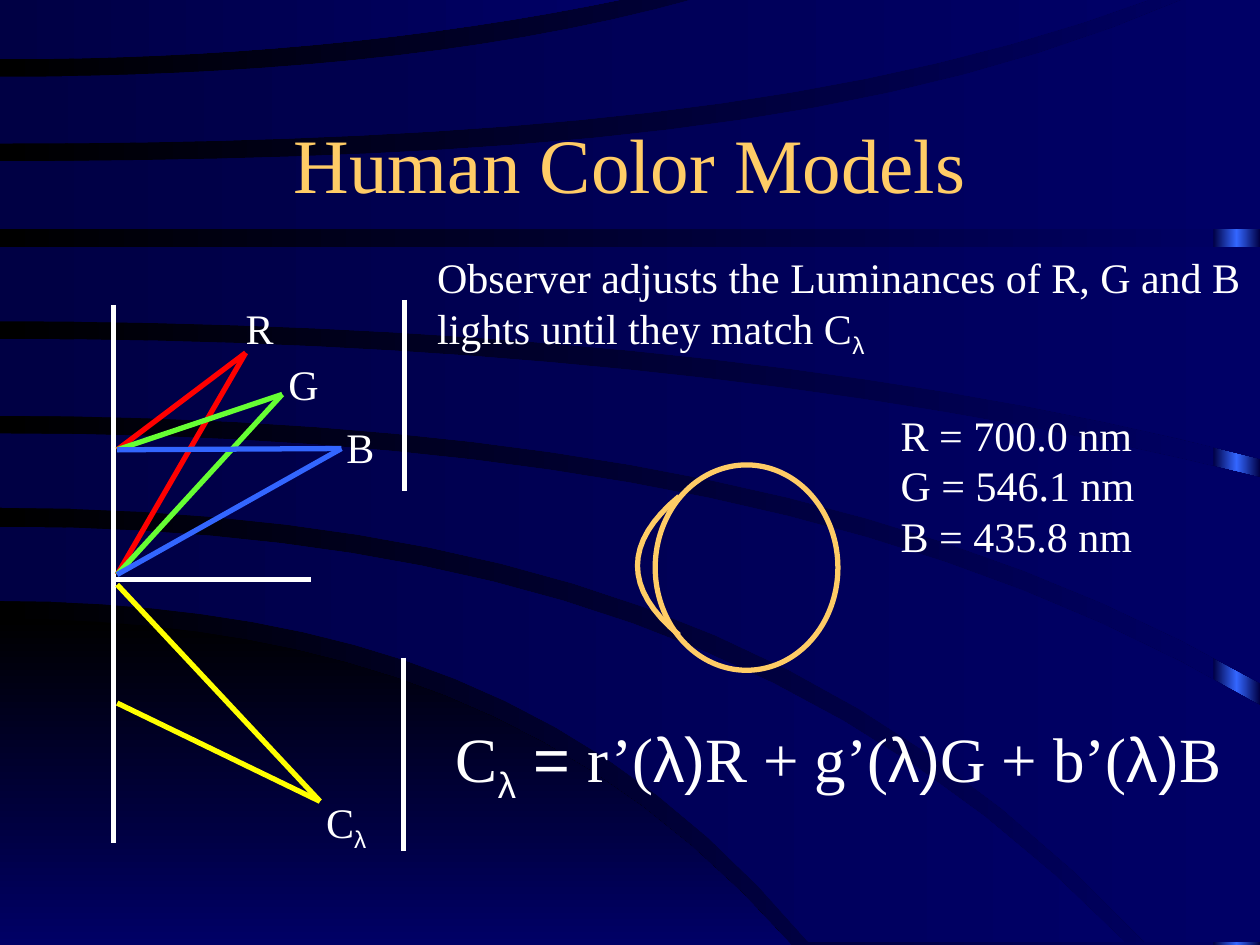
from copy import deepcopy
from dataclasses import dataclass
from typing import NamedTuple

from lxml.etree import SubElement
from pptx import Presentation
from pptx.dml.color import RGBColor
from pptx.enum.shapes import MSO_CONNECTOR, MSO_SHAPE
from pptx.enum.text import MSO_ANCHOR, MSO_AUTO_SIZE, PP_ALIGN
from pptx.oxml.ns import qn
from pptx.util import Inches, Pt

# The slide is a grid of 100 columns by 75 rows of square cells.
COLUMNS, ROWS = 100, 75
CELL = Inches(0.1)
SERIF, SANS = "Times New Roman", "Arial"
WHITE, GOLD, RED, GREEN, BLUE, YELLOW = (
    "FFFFFF", "FFCC66", "FF0000", "66FF33", "3366FF", "FFFF00")
BLACK, NAVY, DEEP_BLUE = "000000", "000044", "000066"
LINE_WIDTH = Pt(3)
STEPS = 16
BEND = 0.7

Point = tuple[float, float]


class Edge(NamedTuple):
    """A curve, level at the left side, by its rows at the start, bend and end."""
    start: float
    bend: float
    end: float
    reach: float = COLUMNS

    def points(self) -> list[Point]:
        rise, bow = self.end - self.start, self.bend - self.start
        square = (bow - rise * BEND**4) / (BEND**2 - BEND**4)
        shares = [step / STEPS for step in range(STEPS + 1)]
        return [(self.reach * t, self.start + square * t**2 + (rise - square) * t**4)
                for t in shares]


def level(row: float, reach: float = COLUMNS) -> Edge:
    return Edge(row, row, row, reach)


@dataclass
class Wave:
    upper: Edge
    lower: Edge
    start_color: str = NAVY
    angle: int = 0

    def outline(self) -> list[Point]:
        """Both edges, squared off at the right side if one of them reaches it."""
        corners = []
        if max(self.upper.reach, self.lower.reach) == COLUMNS:
            corners = [(COLUMNS, self.upper.end), (COLUMNS, self.lower.end)]
        return self.upper.points() + corners + self.lower.points()[::-1]


class Stroke(NamedTuple):
    start: Point
    end: Point
    color: str = WHITE


class Light(NamedTuple):
    apex: Point
    color: str
    wall_rows: Point


class Span(NamedTuple):
    text: str
    font: str = SERIF
    subscript: bool = False


class Label(NamedTuple):
    left: float
    top: float
    width: float
    lines: list[list[Span]]
    size: int = 24


BOTTOM, TOP = 74.8, -0.2
WAVES = [
    Wave(Edge(49.1, 59.4, ROWS, 62.8), level(ROWS, 62.5), BLACK, 270),
    Wave(Edge(41.8, 54.8, BOTTOM, 89.3), Edge(47.7, 58.2, BOTTOM, 64.2)),
    Wave(Edge(34.4, 43, 56), Edge(40.3, 53.7, BOTTOM, 90.9)),
    Wave(Edge(26.9, 31.9, 37.9), Edge(33, 41.5, 54.2)),
    Wave(level(19.6), Edge(25.5, 30.3, 36.4)),
    Wave(Edge(12.8, 8.3, TOP, 94.3), level(18.2)),
    Wave(Edge(6.1, 3.4, TOP, 55.6), Edge(11.4, 7.1, TOP, 91.7)),
    Wave(level(TOP, 50.1), Edge(4.7, 2.4, TOP, 50.1)),
]
SCREENS = [
    Stroke((9, 24.2), (9, 66.9)),
    Stroke((9, 46), (24.7, 46)),
    Stroke((32.1, 23.8), (32.1, 39)),
    Stroke((32, 52.2), (32, 67.5)),
]
WALL_COLUMN = 9.3
UPPER_WALL, LOWER_WALL = (35.7, 45.6), (46.4, 55.8)
LIGHTS = [
    Light((19.5, 28), RED, UPPER_WALL),
    Light((22.4, 31.3), GREEN, UPPER_WALL),
    Light((27.1, 35.6), BLUE, UPPER_WALL),
    Light((25.4, 63.6), YELLOW, LOWER_WALL),
]
RAYS = [Stroke(light.apex, (WALL_COLUMN, row), light.color)
        for light in LIGHTS for row in light.wall_rows]
LAMBDA = Span("λ", SANS, True)
ARGUMENT = Span("λ)", SANS)
LABELS = [
    Label(18.5, 23.5, 4.2, [[Span("R")]]),
    Label(21.9, 28, 4.4, [[Span("G")]]),
    Label(26.5, 33, 4.2, [[Span("B")]]),
    Label(24.9, 62.7, 5.5, [[Span("C"), LAMBDA]]),
    Label(33.7, 19.5, 65.8, [
        [Span("Observer adjusts the Luminances of R, G and B")],
        [Span("lights until they match C"), LAMBDA]]),
    Label(35.2, 56.6, 64, [
        [Span("C"), LAMBDA, Span(" = ", SANS), Span("r’("), ARGUMENT, Span("R + g’("),
         ARGUMENT, Span("G + b’("), ARGUMENT, Span("B")]], 36),
    Label(70.5, 32, 20.6, [
        [Span(text)] for text in ("R = 700.0 nm", "G = 546.1 nm", "B = 435.8 nm")]),
]


def rgb(color: str) -> RGBColor:
    return RGBColor.from_string(color)


def cells(*values: float) -> list[int]:
    return [round(value * CELL) for value in values]


def fill_gradient(fill, start: str, end: str, angle: int = 0) -> None:
    fill.gradient()
    fill.gradient_angle = angle
    for stop, color, position in zip(fill.gradient_stops, (start, end), (0, 1)):
        stop.color.rgb = rgb(color)
        stop.position = position


def draw_outline(shapes, points: list[Point], close: bool):
    first, *rest = [cells(*point) for point in points]
    builder = shapes.build_freeform(*first)
    builder.add_line_segments(rest, close=close)
    shape = builder.convert_to_shape()
    shape.shadow.inherit = False
    return shape


def draw_wave(shapes, wave: Wave) -> None:
    shape = draw_outline(shapes, wave.outline(), True)
    fill_gradient(shape.fill, wave.start_color, DEEP_BLUE, wave.angle)
    shape.line.fill.background()


def draw_glow_strip(shapes) -> None:
    """Strip down the right side, bright along its middle."""
    width = 3.7
    strip = shapes.add_shape(MSO_SHAPE.RECTANGLE, *cells(COLUMNS - width, 0, width, ROWS))
    strip.shadow.inherit = False
    strip.line.fill.background()
    fill_gradient(strip.fill, NAVY, NAVY)
    stops = strip.element.find(".//" + qn("a:gsLst"))
    stops.insert(1, deepcopy(stops[0]))
    middle = strip.fill.gradient_stops[1]
    middle.position = 0.5
    middle.color.rgb = rgb(BLUE)


def draw_eye(shapes) -> None:
    parts = shapes.add_group_shape().shapes
    eyeball = parts.add_shape(MSO_SHAPE.OVAL, *cells(52, 36.9, 14.5, 16.3))
    eyeball.shadow.inherit = False
    heights = [2 * step / STEPS - 1 for step in range(STEPS + 1)]
    cornea = [(53.9 - 3.3 * (1 - height**2), 44.9 + 5.5 * height) for height in heights]
    for shape in (eyeball, draw_outline(parts, cornea, False)):
        shape.fill.background()
        shape.line.color.rgb = rgb(GOLD)
        shape.line.width = LINE_WIDTH


def draw_stroke(shapes, stroke: Stroke) -> None:
    connector = shapes.add_connector(
        MSO_CONNECTOR.STRAIGHT, *cells(*stroke.start, *stroke.end))
    connector.line.color.rgb = rgb(stroke.color)
    connector.line.width = LINE_WIDTH
    SubElement(connector.element.spPr, qn("a:effectLst"))


def draw_label(shapes, label: Label) -> None:
    height = len(label.lines) * label.size / 6 + 1
    box = shapes.add_textbox(*cells(label.left, label.top, label.width, height))
    frame = box.text_frame
    frame.word_wrap = False
    frame.auto_size = MSO_AUTO_SIZE.SHAPE_TO_FIT_TEXT
    for index, spans in enumerate(label.lines):
        paragraph = frame.add_paragraph() if index else frame.paragraphs[0]
        for span in spans:
            run = paragraph.add_run()
            run.text = span.text
            run.font.name, run.font.size = span.font, Pt(label.size)
            run.font.color.rgb = rgb(WHITE)
            if span.subscript:
                run.font._element.set("baseline", "-25000")


def place_title(slide) -> None:
    title = slide.shapes.title
    title.element.getparent().append(title.element)  # in front of the waves
    title.left, title.top, title.width, title.height = cells(7.5, 6.7, 85, 12.5)
    frame = title.text_frame
    frame.text = "Human Color Models"
    frame.vertical_anchor = MSO_ANCHOR.MIDDLE
    paragraph = frame.paragraphs[0]
    paragraph.alignment = PP_ALIGN.CENTER
    font = paragraph.runs[0].font
    font.name, font.size = SERIF, Pt(44)
    font.color.rgb = rgb(GOLD)


def main() -> None:
    presentation = Presentation()
    presentation.slide_width, presentation.slide_height = cells(COLUMNS, ROWS)
    slide = presentation.slides.add_slide(presentation.slide_layouts[5])
    shapes = slide.shapes
    fill_gradient(slide.background.fill, BLACK, DEEP_BLUE)
    draw_glow_strip(shapes)
    for wave in WAVES:
        draw_wave(shapes, wave)
    place_title(slide)
    draw_eye(shapes)
    for stroke in SCREENS + RAYS:
        draw_stroke(shapes, stroke)
    for label in LABELS:
        draw_label(shapes, label)
    presentation.save("out.pptx")


if __name__ == "__main__":
    main()
